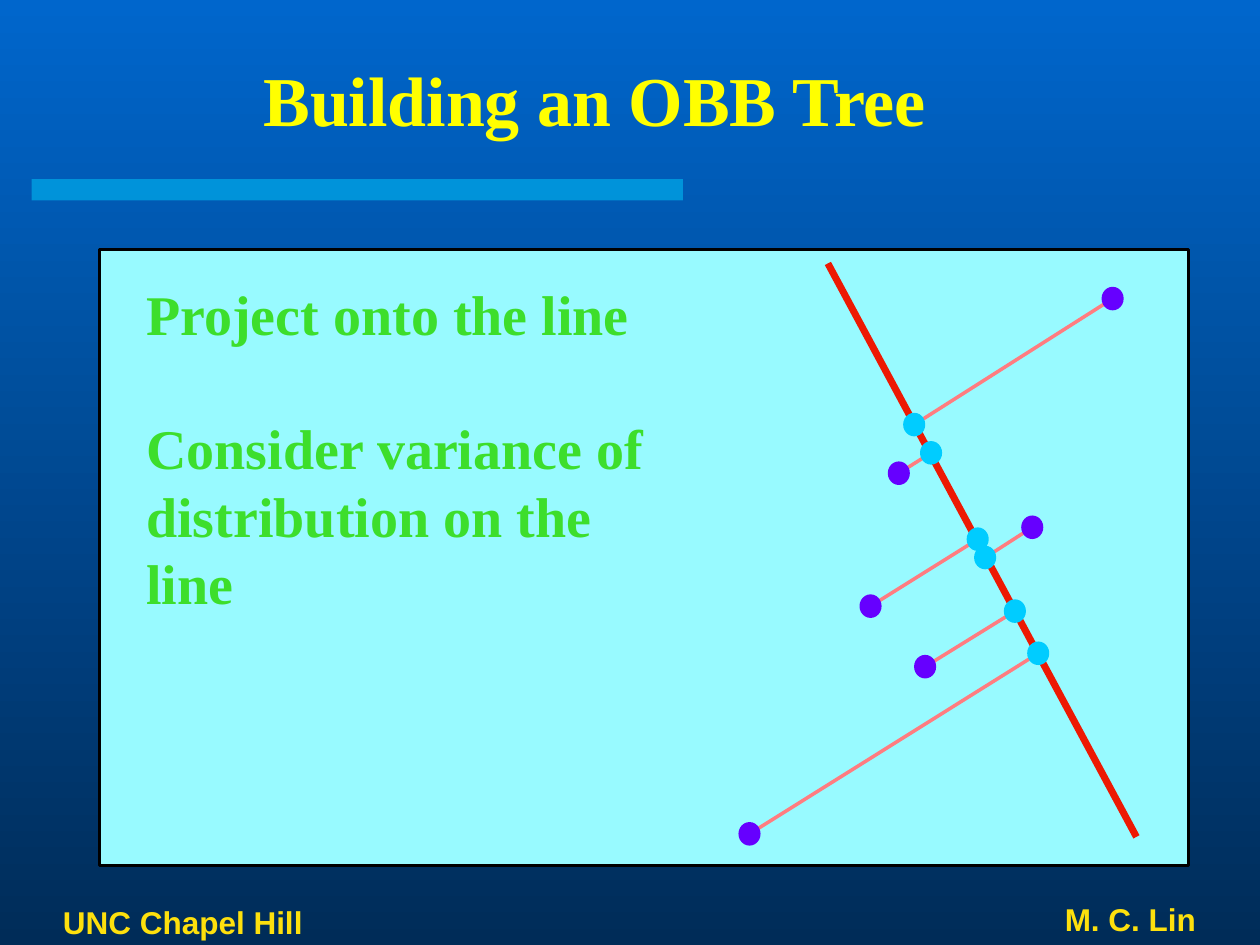
from dataclasses import dataclass
from typing import NamedTuple

from lxml.etree import SubElement
from pptx import Presentation
from pptx.dml.color import RGBColor
from pptx.enum.shapes import MSO_CONNECTOR as Connector, MSO_SHAPE as Shape
from pptx.enum.text import MSO_ANCHOR as Anchor, PP_ALIGN as Align
from pptx.oxml.ns import qn
from pptx.util import Cm, Pt


@dataclass(frozen=True)
class Theme:
    sky: str = "0066CC"
    night: str = "002C58"
    bar: str = "00CCFF"
    title: str = "FFFF00"
    footer: str = "FDE00D"
    panel: str = "98FAFF"
    border: str = "000000"
    body: str = "3DDE2C"
    link: str = "FF7C80"
    sample: str = "6600FF"
    axis: str = "ED1903"
    projection: str = "00CCFF"
    serif: str = "Times New Roman"
    sans: str = "Arial"
    title_size: float = 40
    body_size: float = 32
    footer_size: float = 18
    body_pitch: float = 38.4


class Box(NamedTuple):
    """Lengths in centimetres."""
    left: float
    top: float
    width: float
    height: float

    def inner(self, left, top, width, height):
        return Box(self.left + left, self.top + top, width, height)

    def point(self, x, y):
        return self.left + x, self.top + y

    def emu(self):
        return [Cm(length) for length in self]


THEME = Theme()
DOT_WIDTH, DOT_HEIGHT = 0.41, 0.44
AXIS = ((14.68, 0.28), (20.9, 11.84))
# Each sample point with its projection on the axis, relative to the panel
PROJECTIONS = [
    ((20.42, 0.99), (16.42, 3.53)),
    ((16.11, 4.51), (16.76, 4.1)),
    ((18.8, 5.6), (17.85, 6.21)),
    ((15.54, 7.19), (17.7, 5.84)),
    ((16.64, 8.41), (18.45, 7.29)),
    ((13.1, 11.78), (18.92, 8.14)),
]


def rgb(color):
    return RGBColor.from_string(color)


def add_text(slide, box, *lines, font, size, color, align=Align.LEFT,
             anchor=Anchor.MIDDLE, pitch=None, gap_after_first=None):
    frame = slide.shapes.add_textbox(*box.emu()).text_frame
    frame.word_wrap = True
    frame.vertical_anchor = anchor
    for index, line in enumerate(lines):
        paragraph = frame.add_paragraph() if index else frame.paragraphs[0]
        paragraph.alignment = align
        if pitch:
            paragraph.line_spacing = Pt(pitch)
        if gap_after_first and index == 0:
            paragraph.space_after = Pt(gap_after_first)
        run = paragraph.add_run()
        run.text = line
        run.font.name, run.font.size, run.font.bold = font, Pt(size), True
        run.font.color.rgb = rgb(color)


def add_filled(slide, kind, box, fill, line=None, weight=1):
    shape = slide.shapes.add_shape(kind, *box.emu())
    shape.shadow.inherit = False
    shape.fill.solid()
    shape.fill.fore_color.rgb = rgb(fill)
    if line:
        shape.line.color.rgb = rgb(line)
        shape.line.width = Pt(weight)
    else:
        shape.line.fill.background()
    return shape


def add_line(slide, start, end, color, weight):
    ends = [Cm(length) for length in (*start, *end)]
    line = slide.shapes.add_connector(Connector.STRAIGHT, *ends)
    line.line.color.rgb = rgb(color)
    line.line.width = Pt(weight)
    SubElement(line._element.spPr, qn("a:effectLst"))


def add_dot(slide, center, color):
    x, y = center
    box = Box(x - DOT_WIDTH / 2, y - DOT_HEIGHT / 2, DOT_WIDTH, DOT_HEIGHT)
    add_filled(slide, Shape.OVAL, box, color, line=color)


def paint_background(slide):
    fill = slide.background.fill
    fill.gradient()
    fill.gradient_angle = 270
    for stop, color in zip(fill.gradient_stops, (THEME.sky, THEME.night)):
        stop.color.rgb = rgb(color)


def add_header(slide, box):
    bar = add_filled(slide, Shape.RECTANGLE, box.inner(0, 2.8, 13.13, 0.43), THEME.bar)
    color = bar._element.spPr.find(qn("a:solidFill"))[0]
    SubElement(color, qn("a:alpha"), val="50000")
    add_text(slide, box.inner(0.1, 0, 22.5, 2.36), "Building an OBB Tree",
             font=THEME.serif, size=THEME.title_size, color=THEME.title,
             align=Align.CENTER)


def add_footer(slide, box):
    style = dict(font=THEME.sans, size=THEME.footer_size, color=THEME.footer)
    add_text(slide, box.inner(0, 0.13, 6, 0.91), "UNC Chapel Hill", **style)
    add_text(slide, box.inner(12.24, 0, 11.1, 1.04), "M. C. Lin",
             align=Align.RIGHT, **style)


def add_projection_diagram(slide, box):
    pairs = [(box.point(*sample), box.point(*foot)) for sample, foot in PROJECTIONS]
    for sample, foot in pairs:
        add_line(slide, sample, foot, THEME.link, 2)
    for sample, _ in pairs:
        add_dot(slide, sample, THEME.sample)
    add_line(slide, *(box.point(*end) for end in AXIS), THEME.axis, 4)
    for _, foot in pairs:
        add_dot(slide, foot, THEME.projection)


def add_panel(slide, box):
    add_filled(slide, Shape.RECTANGLE, box, THEME.panel, line=THEME.border, weight=2)
    add_text(slide, box.inner(0.69, 0.48, 11.5, 7), "Project onto the line",
             "Consider variance of", "distribution on the", "line",
             font=THEME.serif, size=THEME.body_size, color=THEME.body,
             anchor=Anchor.TOP, pitch=THEME.body_pitch,
             gap_after_first=THEME.body_pitch)
    add_projection_diagram(slide, box)


def main():
    deck = Presentation()
    deck.slide_width, deck.slide_height = Cm(25.4), Cm(19.05)
    slide = deck.slides.add_slide(deck.slide_layouts[6])
    paint_background(slide)
    add_header(slide, Box(0.64, 0.81, 22.6, 3.23))
    add_footer(slide, Box(1.02, 18.01, 23.34, 1.04))
    add_panel(slide, Box(2.01, 5.03, 21.95, 12.42))
    deck.save("out.pptx")


if __name__ == "__main__":
    main()
